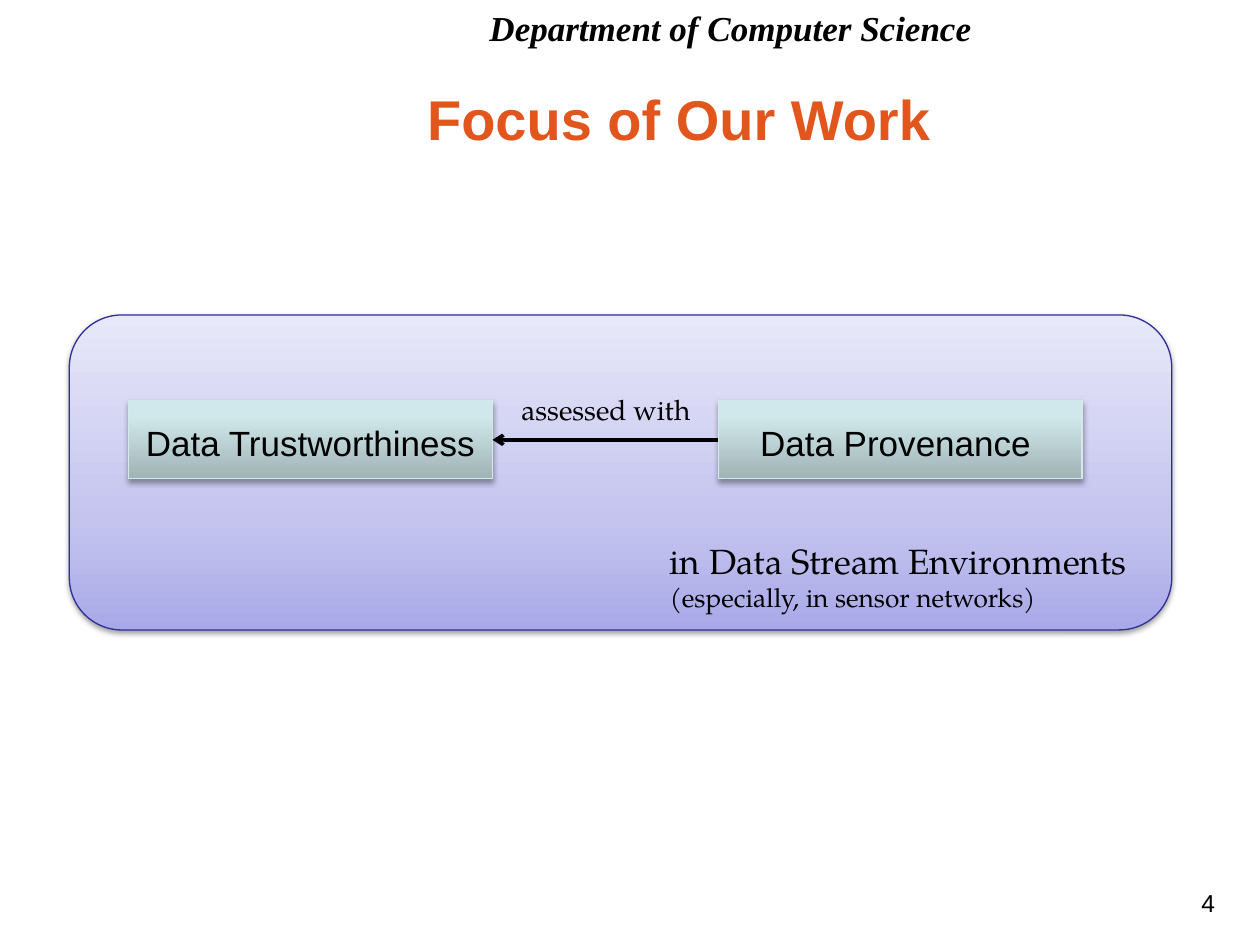
from copy import deepcopy

from lxml import etree
from pptx import Presentation
from pptx.dml.color import RGBColor
from pptx.enum.shapes import MSO_CONNECTOR, MSO_SHAPE
from pptx.enum.text import MSO_ANCHOR, PP_ALIGN
from pptx.oxml.ns import qn
from pptx.util import Pt

LEFT, CENTER, RIGHT = PP_ALIGN.LEFT, PP_ALIGN.CENTER, PP_ALIGN.RIGHT
TOP, MIDDLE = MSO_ANCHOR.TOP, MSO_ANCHOR.MIDDLE
RECTANGLE, ROUNDED = MSO_SHAPE.RECTANGLE, MSO_SHAPE.ROUNDED_RECTANGLE
STRAIGHT = MSO_CONNECTOR.STRAIGHT
SERIF = "TeX Gyre Pagella"
BLACK = "000000"
LEFT_SIDE, RIGHT_SIDE = 1, 3

PANEL_STYLE = {
    "stops": [(0, "A9A9E9"), (0.35, "C4C4EF"), (1, "E8E8FA")],
    "line": "2F2F98", "opacity": 38, "distance": 1.6,
}
CONCEPT_STYLE = {
    "stops": [(0, "A0B3B5"), (0.8, "D0E8EB"), (1, "D1EAEC")],
    "line": "D5E8EA", "opacity": 35, "distance": 1.8,
}


def color(value):
    return RGBColor.from_string(value)


def write(frame, lines, align=LEFT, anchor=TOP):
    frame.word_wrap = True
    frame.vertical_anchor = anchor
    for index, (text, formats) in enumerate(lines):
        para = frame.add_paragraph() if index else frame.paragraphs[0]
        para.alignment = align
        span = para.add_run()
        span.text = text
        settings = {"name": "Arial", **formats, "size": Pt(formats["size"])}
        ink = settings.pop("ink", BLACK)
        for name, value in settings.items():
            setattr(span.font, name, value)
        span.font.color.rgb = color(ink)


def add_text(page, place, lines, align=LEFT, anchor=TOP):
    box = page.shapes.add_textbox(*map(Pt, place))
    write(box.text_frame, lines, align, anchor)


def add_gradient_shape(page, kind, place, style):
    shape = page.shapes.add_shape(kind, *map(Pt, place))
    shape.fill.gradient()
    shape.fill.gradient_angle = 90
    stop_list = next(shape.element.spPr.iter(qn("a:gsLst")))
    stop_list.append(deepcopy(stop_list[0]))
    for stop, (position, value) in zip(shape.fill.gradient_stops, style["stops"]):
        stop.position = position
        stop.color.rgb = color(value)
    shape.line.color.rgb = color(style["line"])
    shape.line.width = Pt(0.75)
    add_shadow(shape, style)
    return shape


def add_shadow(shape, style):
    shape.shadow.inherit = False
    effects = shape.element.spPr.find(qn("a:effectLst"))
    shadow = etree.SubElement(
        effects, qn("a:outerShdw"), blurRad=str(Pt(3.1)),
        dist=str(Pt(style["distance"])), dir="5400000", rotWithShape="0")
    tint = etree.SubElement(shadow, qn("a:srgbClr"), val=BLACK)
    etree.SubElement(tint, qn("a:alpha"), val=str(style["opacity"] * 1000))


def add_concept(page, place, label, right_inset=7.2):
    box = add_gradient_shape(page, RECTANGLE, place, CONCEPT_STYLE)
    frame = box.text_frame
    frame.margin_top = Pt(6)
    frame.margin_right = Pt(right_inset)
    write(frame, [(label, {"size": 20})], CENTER, MIDDLE)
    return box


def add_arrow(page, start, finish):
    arrow = page.shapes.add_connector(STRAIGHT, 0, 0, 0, 0)
    arrow.begin_connect(start, LEFT_SIDE)
    arrow.end_connect(finish, RIGHT_SIDE)
    arrow.line.color.rgb = color(BLACK)
    arrow.line.width = Pt(2)
    properties = arrow.element.spPr
    etree.SubElement(properties.find(qn("a:ln")), qn("a:tailEnd"), type="arrow")
    etree.SubElement(properties, qn("a:effectLst"))


def add_focus_panel(page, place):
    left, top, width, height = place
    add_gradient_shape(page, ROUNDED, place, PANEL_STYLE)
    row = top + 49
    provenance = add_concept(
        page, (left + 370.8, row, 208, 44.64), "Data Provenance", 12.4)
    trust = add_concept(
        page, (left + 33.84, row, 208, 44.64), "Data Trustworthiness")
    add_arrow(page, provenance, trust)
    add_text(page, (left + 251.3, top + 41, 118, 26.6),
             [("assessed with", {"name": SERIF, "size": 16})])
    add_text(page, (left + 336.2, top + 124.5, 282, 49.7), [
        ("in Data Stream Environments", {"name": SERIF, "size": 20}),
        ("(especially, in sensor networks)", {"name": SERIF, "size": 15}),
    ])


def add_heading(page, place):
    left, top, width, height = place
    add_text(page, (left + 188, top, 292.3, 31), [
        ("Department of Computer Science",
         {"name": "Times New Roman", "size": 20, "bold": True, "italic": True}),
    ], RIGHT)
    add_text(page, (left, top + 37.4, width, 59.8), [
        ("Focus of Our Work", {"size": 32, "bold": True, "ink": "E2561E"}),
    ], CENTER, MIDDLE)


def add_page_number(page, place):
    add_text(page, place, [("4", {"size": 14})], RIGHT)


def main():
    deck = Presentation()
    deck.slide_width, deck.slide_height = Pt(720), Pt(540)
    page = deck.slides.add_slide(deck.slide_layouts[6])
    add_heading(page, (82, 0, 612, 97.2))
    add_focus_panel(page, (39.6, 180, 630, 180))
    add_page_number(page, (551.5, 504, 149.8, 36))
    deck.save("out.pptx")


if __name__ == "__main__":
    main()
